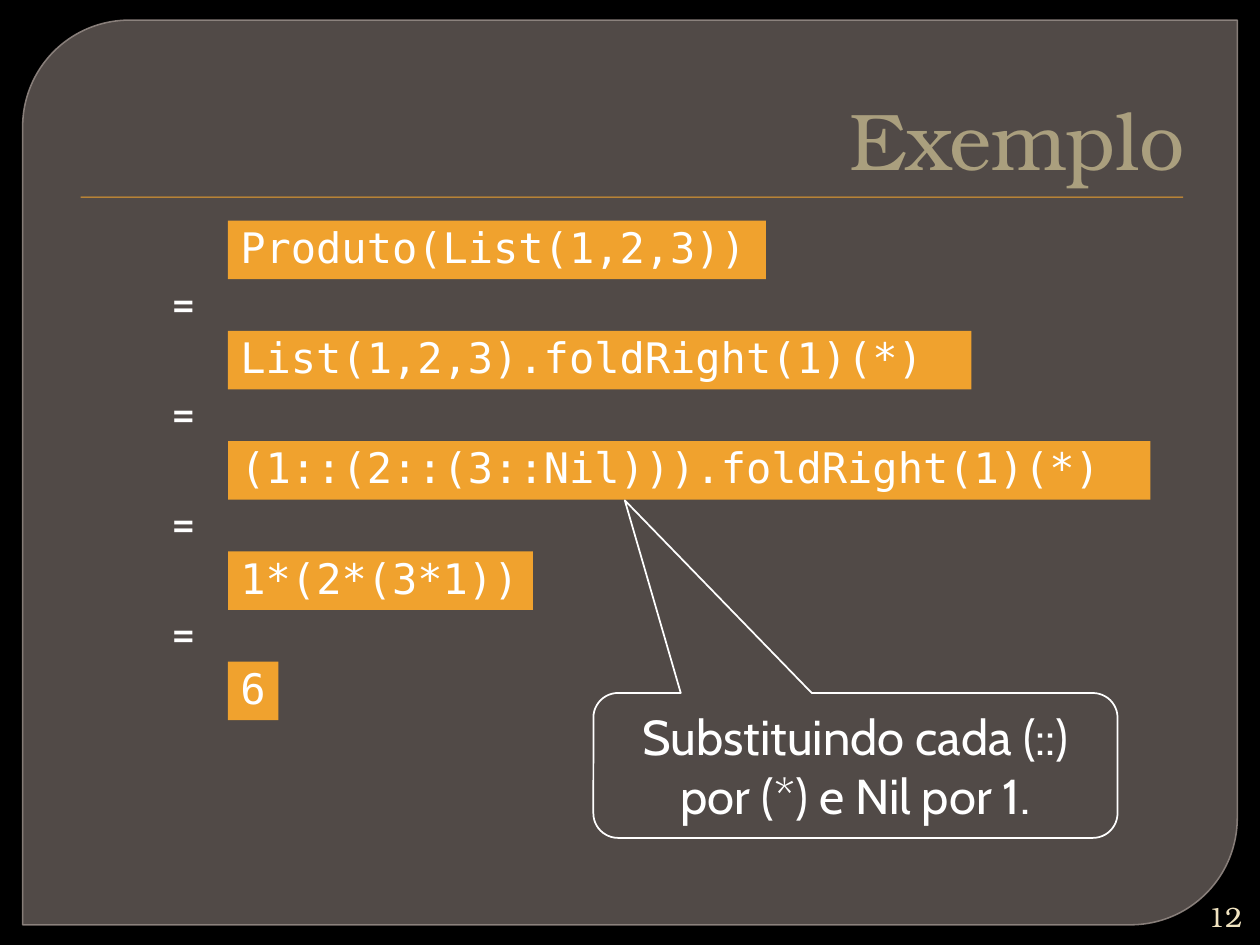
import collections
import pptx
import pptx.util
import pptx.dml.color
import pptx.enum.shapes
import pptx.enum.text
import pptx.oxml
import pptx.oxml.ns

COLORS = {"back": "000000", "panel": "7D726E", "edge": "948A85", "accent": "F0A22E",
          "title": "FFF49C", "number": "F0E3C0", "text": "FFFFFF"}
SERIF, SANS, MONO = "TeX Gyre Bonum", "Cabin", "DejaVu Sans Mono"
WIDTH, HEIGHT = pptx.util.Inches(10), pptx.util.Inches(7.5)
COLUMNS, ROWS = 100, 75

Box = collections.namedtuple("Box", "left top width height")
SHAPES = pptx.enum.shapes.MSO_SHAPE
ALIGN = pptx.enum.text.PP_ALIGN
ANCHOR = pptx.enum.text.MSO_ANCHOR


def color(name):
    return pptx.dml.color.RGBColor.from_string(COLORS[name])


def place(box):
    return (round(WIDTH * box.left / COLUMNS), round(HEIGHT * box.top / ROWS),
            round(WIDTH * box.width / COLUMNS), round(HEIGHT * box.height / ROWS))


def inside(box, left, top, width, height):
    return Box(box.left + left, box.top + top, width, height)


def write(shape, text, size, font, tint="text", align=ALIGN.LEFT,
          anchor=ANCHOR.MIDDLE, spacing=1.0, wrap=True):
    frame = shape.text_frame
    frame.auto_size = pptx.enum.text.MSO_AUTO_SIZE.NONE
    frame.word_wrap = wrap
    frame.vertical_anchor = anchor
    para = frame.paragraphs[0]
    para.alignment = align
    para.line_spacing = spacing
    span = para.add_run()
    span.text = text
    span.font.size = pptx.util.Pt(size)
    span.font.name = font
    span.font.color.rgb = color(tint)


def add_shape(page, kind, box, fill=None, line=None, line_width=1):
    shape = page.shapes.add_shape(kind, *place(box))
    shape.shadow.inherit = False
    if fill:
        shape.fill.solid()
        shape.fill.fore_color.rgb = color(fill)
    else:
        shape.fill.background()
    if line:
        shape.line.color.rgb = color(line)
        shape.line.width = pptx.util.Pt(line_width)
    else:
        shape.line.fill.background()
    return shape


def set_opacity(shape, percents):
    tag = pptx.oxml.ns.qn("a:srgbClr")
    for tone, percent in zip(shape.element.spPr.iter(tag), percents):
        alpha = pptx.oxml.parse_xml(
            f'<a:alpha {pptx.oxml.ns.nsdecls("a")} val="{percent * 1000}"/>')
        tone.append(alpha)


def add_backdrop(page, box):
    page.background.fill.solid()
    page.background.fill.fore_color.rgb = color("back")
    panel = add_shape(page, SHAPES.ROUND_2_DIAG_RECTANGLE, box, "panel", "edge", 0.87)
    panel.adjustments[0] = 0.118
    panel.adjustments[1] = 0
    set_opacity(panel, (65, 88))


def add_heading(page, box, text):
    add_shape(page, SHAPES.RECTANGLE, inside(box, 1.4, 12.8, 87.5, 0.1), "accent")
    title = page.shapes.title
    title.left, title.top, title.width, title.height = place(box)
    write(title, text, 46, SERIF, "title", ALIGN.RIGHT, ANCHOR.BOTTOM)


def add_page_number(page, box, text):
    number = page.shapes.add_textbox(*place(box))
    write(number, text, 16, SERIF, "number", ALIGN.RIGHT)


def add_steps(page, box, steps):
    pitch = box.height / len(steps)
    for index, (code, width) in enumerate(steps):
        top = index * pitch
        bar = add_shape(page, SHAPES.RECTANGLE, inside(box, 5.9, top, width, 4.65), "accent")
        write(bar, code, 24, MONO, spacing=0.9)
        bar.text_frame.margin_right = 0
        if index:
            sign = page.shapes.add_textbox(*place(inside(box, 0, top - 5.25, 4.8, 5.7)))
            write(sign, "=", 28, SANS, align=ALIGN.CENTER, wrap=False)


def add_callout(page, box, text):
    callout = add_shape(page, SHAPES.ROUNDED_RECTANGULAR_CALLOUT, box, line="text")
    for index, value in enumerate((-0.44, -1.83, 0.17)):
        callout.adjustments[index] = value
    write(callout, text, 28, SANS, align=ALIGN.CENTER)


def main():
    deck = pptx.Presentation()
    deck.slide_width, deck.slide_height = WIDTH, HEIGHT
    page = deck.slides.add_slide(deck.slide_layouts[5])
    add_backdrop(page, Box(1.8, 1.6, 96.4, 71.8))
    add_heading(page, Box(5, 2.8, 90, 12.5), "Exemplo")
    add_page_number(page, Box(94.5, 71.2, 5.1, 3), "12")
    add_steps(page, Box(12.2, 17.5, 79.1, 43.75), [
        ("Produto(List(1,2,3))", 42.7),
        ("List(1,2,3).foldRight(1)(*)", 59),
        ("(1::(2::(3::Nil))).foldRight(1)(*)", 73.2),
        ("1*(2*(3*1))", 24.2),
        ("6", 4),
    ])
    add_callout(page, Box(47.1, 55, 41.6, 11.5), "Substituindo cada (::) por (*) e Nil por 1.")
    deck.save("out.pptx")


if __name__ == "__main__":
    main()
